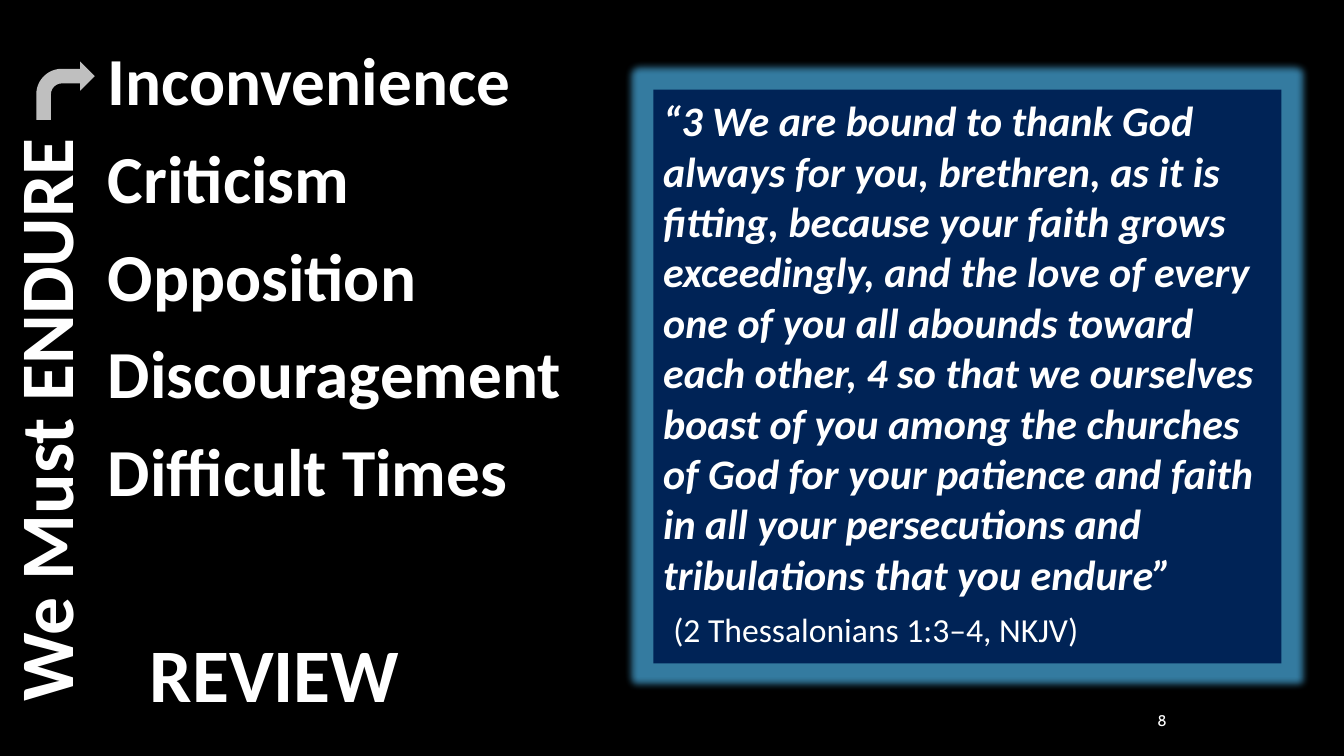
from lxml import etree
from pptx import Presentation
from pptx.dml.color import RGBColor
from pptx.enum.shapes import MSO_SHAPE
from pptx.enum.text import MSO_ANCHOR, MSO_AUTO_SIZE, PP_ALIGN
from pptx.oxml.ns import qn
from pptx.util import Inches, Pt

BLACK = RGBColor(0x00, 0x00, 0x00)
WHITE = RGBColor(0xFF, 0xFF, 0xFF)
ARROW_GREY = RGBColor(0xBF, 0xBF, 0xBF)
NAVY = RGBColor(0x00, 0x23, 0x56)
GLOW_BLUE = RGBColor(0x34, 0x7B, 0xA0)

TRIALS = ["Inconvenience", "Criticism", "Opposition", "Discouragement", "Difficult Times"]
VERSE = (
    "“3 We are bound to thank God always for you, brethren, as it is fitting, "
    "because your faith grows exceedingly, and the love of every one of you all "
    "abounds toward each other, 4 so that we ourselves boast of you among the "
    "churches of God for your patience and faith in all your persecutions and "
    "tribulations that you endure”"
)
REFERENCE = "(2 Thessalonians 1:3–4, NKJV)"


def set_place(shape, box):
    for side, length in zip(("left", "top", "width", "height"), box):
        setattr(shape, side, Inches(length))


def set_frame(shape, wrap=True, anchor=MSO_ANCHOR.TOP):
    frame = shape.text_frame
    formats = {"word_wrap": wrap, "vertical_anchor": anchor, "auto_size": MSO_AUTO_SIZE.NONE}
    for name, value in formats.items():
        setattr(frame, name, value)
    return frame


def write(paragraph, text, size, align=PP_ALIGN.LEFT, **formats):
    paragraph.text = text
    paragraph.alignment = align
    font = paragraph.font
    font.color.rgb = WHITE
    for name, value in {"name": "Calibri", "size": Pt(size), **formats}.items():
        setattr(font, name, value)


def add_trials(slide, box):
    trials = slide.placeholders[1]
    set_place(trials, box)
    frame = set_frame(trials)
    for number, trial in enumerate(TRIALS):
        paragraph = frame.add_paragraph() if number else frame.paragraphs[0]
        properties = paragraph._p.get_or_add_pPr()
        properties.set("marL", "0")
        properties.set("indent", "0")
        etree.SubElement(properties, qn("a:buNone"))
        write(paragraph, trial, 48, bold=True)
        paragraph.line_spacing = 0.9
        paragraph.space_before = Pt(18 if number else 0)


def add_review_title(slide, box):
    review = slide.shapes.title
    set_place(review, box)
    frame = set_frame(review, wrap=False)
    write(frame.paragraphs[0], "REVIEW", 54, PP_ALIGN.CENTER, bold=True)


def add_endure_banner(slide, box):
    left, top, width, height = box
    # Text turned to read upwards about the centre of the banner
    endure = slide.shapes.add_textbox(0, 0, 0, 0)
    set_place(endure, (left + (width - height) / 2, top + (height - width) / 2, height, width))
    endure.rotation = 270
    frame = set_frame(endure, wrap=False)
    write(frame.paragraphs[0], "We Must ENDURE", 54, PP_ALIGN.CENTER, bold=True)

    # Arrow from the banner to the list
    arrow = slide.shapes.add_shape(MSO_SHAPE.BENT_ARROW, 0, 0, 0, 0)
    set_place(arrow, (left + 0.43, top - 0.48, 0.58, 0.58))
    arrow.shadow.inherit = False
    arrow.fill.solid()
    arrow.fill.fore_color.rgb = ARROW_GREY
    arrow.line.fill.background()


def add_scripture(slide, box):
    scripture = slide.shapes.add_shape(MSO_SHAPE.RECTANGLE, 0, 0, 0, 0)
    set_place(scripture, box)
    scripture.fill.solid()
    scripture.fill.fore_color.rgb = NAVY
    scripture.line.fill.background()

    # Blue glow around the panel
    scripture.shadow.inherit = False
    effects = scripture._element.spPr.find(qn("a:effectLst"))
    glow = etree.SubElement(effects, qn("a:glow"), rad=str(Pt(10)))
    etree.SubElement(glow, qn("a:srgbClr"), val=str(GLOW_BLUE))

    # Verse and its reference
    frame = set_frame(scripture)
    write(frame.paragraphs[0], VERSE, 30, bold=True, italic=True)
    reference = frame.add_paragraph()
    reference.space_before = Pt(7.5)
    reference._p.get_or_add_pPr().set("marL", str(Inches(0.1)))
    write(reference, REFERENCE, 24)


def add_slide_number(slide, box):
    number = slide.shapes.add_textbox(0, 0, 0, 0)
    set_place(number, box)
    frame = set_frame(number, anchor=MSO_ANCHOR.MIDDLE)
    write(frame.paragraphs[0], "8", 11, PP_ALIGN.RIGHT, name="Cabin")


def main():
    deck = Presentation()
    deck.slide_width, deck.slide_height = Inches(13.33), Inches(7.5)
    slide = deck.slides.add_slide(deck.slide_layouts[1])
    slide.background.fill.solid()
    slide.background.fill.fore_color.rgb = BLACK

    add_trials(slide, (0.97, 0.42, 5.08, 4.81))
    add_endure_banner(slide, (-0.07, 1.09, 1.01, 6.15))
    add_review_title(slide, (1.33, 6.17, 2.79, 1.01))
    add_scripture(slide, (6.48, 0.89, 6.23, 5.69))
    add_slide_number(slide, (10.75, 7, 0.92, 0.3))
    deck.save("out.pptx")


if __name__ == "__main__":
    main()
